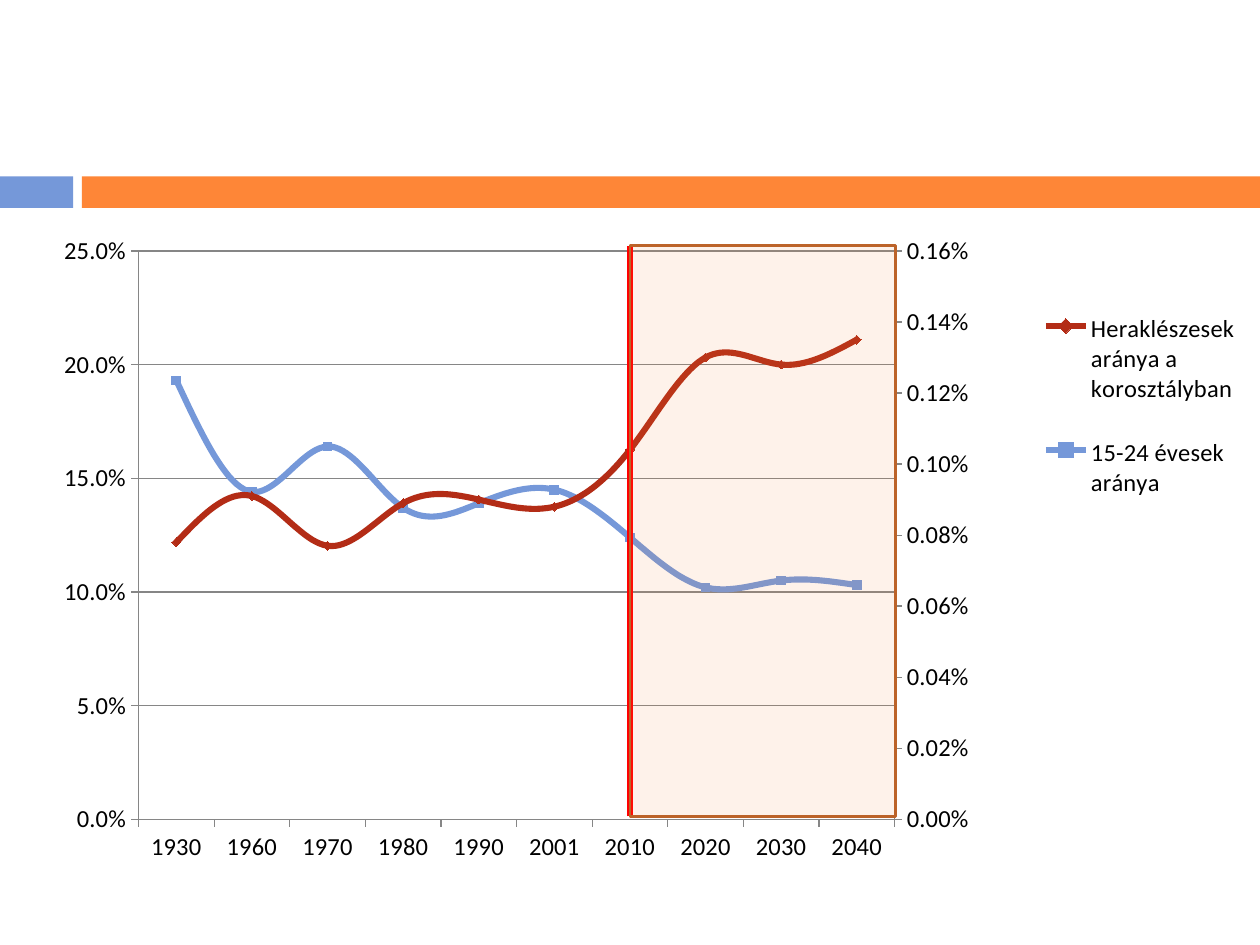
from copy import deepcopy

from lxml import etree
from pptx import Presentation
from pptx.chart.data import CategoryChartData
from pptx.dml.color import RGBColor
from pptx.enum.chart import XL_CHART_TYPE, XL_LEGEND_POSITION, XL_MARKER_STYLE, XL_TICK_MARK
from pptx.enum.shapes import MSO_CONNECTOR, MSO_SHAPE
from pptx.oxml import parse_xml
from pptx.oxml.ns import nsdecls, qn
from pptx.util import Inches, Pt

LINE_STACKED = XL_CHART_TYPE.LINE_MARKERS_STACKED
LEGEND_RIGHT = XL_LEGEND_POSITION.RIGHT
SQUARE, DIAMOND = XL_MARKER_STYLE.SQUARE, XL_MARKER_STYLE.DIAMOND
OUTSIDE = XL_TICK_MARK.OUTSIDE
STRAIGHT = MSO_CONNECTOR.STRAIGHT
RECTANGLE = MSO_SHAPE.RECTANGLE

BLUE, ORANGE, RED, GREY = "7598D9", "FE8637", "B32C16", "868686"
YEARS = ["1930", "1960", "1970", "1980", "1990", "2001", "2010", "2020", "2030", "2040"]
YOUTH = ("15-24 évesek aránya",
         [0.193, 0.144, 0.164, 0.137, 0.139, 0.145, 0.124, 0.102, 0.105, 0.103])
MEMBERS = ("Heraklészesek aránya a korosztályban",
           [0.00078, 0.00091, 0.00077, 0.00089, 0.0009,
            0.00088, 0.00104, 0.0013, 0.00128, 0.00135])


def rgb(value):
    return RGBColor.from_string(value)


def add_rect(slide, x, y, w, h, fill):
    sp = slide.shapes.add_shape(RECTANGLE, Inches(x), Inches(y), Inches(w), Inches(h))
    sp.shadow.inherit = False
    sp.fill.solid()
    sp.fill.fore_color.rgb = rgb(fill)
    sp.line.fill.background()
    return sp


def add_band(slide, x, y, w, h):
    block, gap = 0.58, 0.07
    add_rect(slide, x, y, block, h, BLUE)
    add_rect(slide, x + block + gap, y, w - block - gap, h, ORANGE)


def manual_layout(x, y, w, h, inner=False):
    target = '<c:layoutTarget val="inner"/>' if inner else ""
    return parse_xml(
        f'<c:layout {nsdecls("c")}><c:manualLayout>{target}'
        '<c:xMode val="edge"/><c:yMode val="edge"/>'
        f'<c:x val="{x}"/><c:y val="{y}"/><c:w val="{w}"/><c:h val="{h}"/>'
        '</c:manualLayout></c:layout>')


def style_axis(axis):
    axis.major_tick_mark = OUTSIDE
    axis.format.line.color.rgb = rgb(GREY)
    axis.format.line.width = Pt(0.75)


def style_series(series, color, marker):
    series.smooth = True
    series.format.line.color.rgb = rgb(color)
    series.format.line.width = Pt(3.5)
    series.marker.style = marker
    series.marker.size = 5
    series.marker.format.fill.solid()
    series.marker.format.fill.fore_color.rgb = rgb(color)
    series.marker.format.line.color.rgb = rgb(color)


def move_to_right_axis(chart, index):
    plot_area = chart.plots[0]._element.getparent()
    left = plot_area.find(qn("c:lineChart"))
    right = deepcopy(left)
    for group, keep in ((left, False), (right, True)):
        for i, ser in enumerate(group.findall(qn("c:ser"))):
            if (i == index) != keep:
                group.remove(ser)
    left.addnext(right)

    cat_axis = plot_area.find(qn("c:catAx"))
    val_axis = plot_area.find(qn("c:valAx"))
    right_cat, right_val = deepcopy(cat_axis), deepcopy(val_axis)
    ids = {cat_axis.find(qn("c:axId")).get("val"): "50010",
           val_axis.find(qn("c:axId")).get("val"): "50020"}
    for part in (right, right_cat, right_val):
        for tag in ("c:axId", "c:crossAx"):
            for node in part.findall(qn(tag)):
                node.set("val", ids[node.get("val")])
    right_cat.find(qn("c:delete")).set("val", "1")
    right_val.find(qn("c:axPos")).set("val", "r")
    right_val.find(qn("c:crosses")).set("val", "max")
    right_val.find(qn("c:numFmt")).set("formatCode", "0.00%")
    right_val.remove(right_val.find(qn("c:majorGridlines")))
    val_axis.addnext(right_val)
    right_val.addnext(right_cat)


def add_share_chart(slide, x, y, w, h):
    data = CategoryChartData()
    data.categories = YEARS
    for name, values in (YOUTH, MEMBERS):
        data.add_series(name, values)
    chart = slide.shapes.add_chart(
        LINE_STACKED, Inches(x), Inches(y), Inches(w), Inches(h), data).chart
    chart.has_title = False
    chart.font.name = "Calibri"
    chart.font.size = Pt(14)
    chart.font.color.rgb = rgb("000000")

    style_axis(chart.category_axis)
    axis = chart.value_axis
    style_axis(axis)
    axis.minimum_scale = 0
    axis.has_major_gridlines = True
    axis.major_gridlines.format.line.color.rgb = rgb(GREY)
    axis.tick_labels.number_format = "0.0%"
    axis.tick_labels.number_format_is_linked = False

    plot = chart.plots[0]
    plot.vary_by_categories = False
    for series, color, marker in zip(plot.series, (BLUE, RED), (SQUARE, DIAMOND)):
        style_series(series, color, marker)

    chart.has_legend = True
    legend = chart.legend
    legend.position = LEGEND_RIGHT
    legend.include_in_layout = False
    for old in legend._element.findall(qn("c:layout")):
        legend._element.remove(old)
    legend._element.find(qn("c:legendPos")).addnext(manual_layout(0.82, 0.1, 0.17, 0.34))

    plot_area = plot._element.getparent()
    for old in plot_area.findall(qn("c:layout")):
        plot_area.remove(old)
    plot_area.insert(0, manual_layout(0.11, 0.06, 0.6, 0.77, inner=True))
    move_to_right_axis(chart, 1)


def add_forecast(slide, x, y, w, h):
    line = slide.shapes.add_connector(
        STRAIGHT, Inches(x), Inches(y + h), Inches(x), Inches(y))
    line.line.color.rgb = rgb("FF0000")
    line.line.width = Pt(3)
    etree.SubElement(line._element.spPr, qn("a:effectLst"))

    sp = add_rect(slide, x, y, w, h, ORANGE)
    color = sp._element.spPr.find(qn("a:solidFill"))[0]
    etree.SubElement(color, qn("a:alpha")).set("val", "10000")
    sp.line.color.rgb = rgb("BC6329")
    sp.line.width = Pt(1.5)


def main():
    prs = Presentation()
    prs.slide_width, prs.slide_height = Inches(10), Inches(7.5)
    slide = prs.slides.add_slide(prs.slide_layouts[6])
    add_band(slide, 0, 1.4, 10, 0.25)
    add_share_chart(slide, 0, 1.64, 10, 5.86)
    add_forecast(slide, 5, 1.95, 2.11, 4.53)
    prs.save("out.pptx")


if __name__ == "__main__":
    main()
